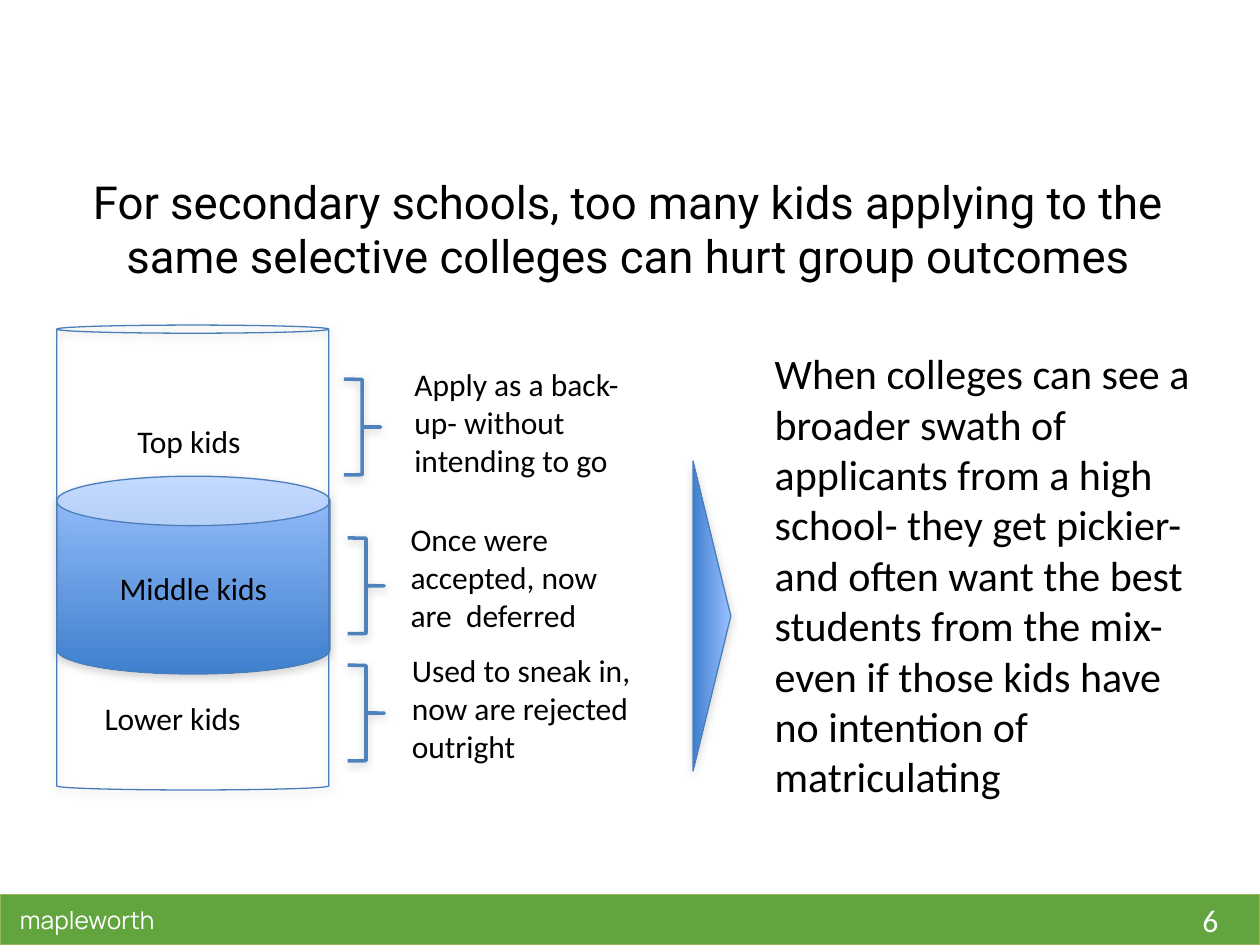
"""Build a slide on how crowded college applications hurt group outcomes."""
from lxml.etree import SubElement
from pptx import Presentation
from pptx.dml.color import RGBColor
from pptx.enum.shapes import MSO_SHAPE
from pptx.enum.text import MSO_ANCHOR, PP_ALIGN
from pptx.oxml.ns import qn
from pptx.util import Inches, Pt

BLACK = RGBColor(0x00, 0x00, 0x00)
WHITE = RGBColor(0xFF, 0xFF, 0xFF)
GREEN = RGBColor(0x62, 0xA4, 0x3E)
LIME = RGBColor(0x98, 0xB9, 0x54)
LIGHT = RGBColor(0x9B, 0xC1, 0xFF)
DEEP = RGBColor(0x3F, 0x80, 0xCD)
EDGE = RGBColor(0x4A, 0x7E, 0xBB)
BRACE = RGBColor(0x4F, 0x81, 0xBD)


def write(shape, text, size=18, font="Calibri", color=BLACK,
          align=PP_ALIGN.LEFT, anchor=MSO_ANCHOR.TOP):
    frame = shape.text_frame
    frame.word_wrap = True
    frame.vertical_anchor = anchor
    para = frame.paragraphs[0]
    para.alignment = align
    run = para.add_run()
    run.text = text
    run.font.size = Pt(size)
    run.font.name = font
    run.font.color.rgb = color


def draw(kind, box, line, width=0.75, fill=None, shade=35, adjust=()):
    shape = slide.shapes.add_shape(kind, *map(Inches, box))
    if fill == "blend":
        shape.fill.gradient()
        shape.fill.gradient_angle = 270
        for stop, color in zip(shape.fill.gradient_stops, (LIGHT, DEEP)):
            stop.color.rgb = color
    elif fill:
        shape.fill.solid()
        shape.fill.fore_color.rgb = fill
    else:
        shape.fill.background()
    shape.line.color.rgb = line
    shape.line.width = Pt(width)
    for i, value in enumerate(adjust):
        shape.adjustments[i] = value
    shape.shadow.inherit = False
    if shade:
        effects = shape._element.spPr.find(qn("a:effectLst"))
        outer = SubElement(effects, qn("a:outerShdw"), blurRad=str(Pt(5)),
                           dist=str(Pt(1.8)), dir="5400000", rotWithShape="0")
        tint = SubElement(outer, qn("a:srgbClr"), val="808080")
        SubElement(tint, qn("a:alpha"), val=str(shade * 1000))
    return shape


deck = Presentation()
deck.slide_width = Inches(10)
deck.slide_height = Inches(7.5)
slide = deck.slides.add_slide(deck.slide_layouts[6])

draw(MSO_SHAPE.RECTANGLE, (0, 7.1, 10, 0.4), LIME, fill=GREEN, shade=0)
middle = draw(MSO_SHAPE.CAN, (0.45, 3.78, 2.17, 1.57), EDGE, fill="blend",
              adjust=[0.25])
write(middle, "Middle kids", align=PP_ALIGN.CENTER, anchor=MSO_ANCHOR.MIDDLE)
draw(MSO_SHAPE.CAN, (0.45, 2.58, 2.16, 3.69), EDGE, adjust=[0.03])
arrow = draw(MSO_SHAPE.ISOSCELES_TRIANGLE, (4.42, 4.74, 2.46, 0.3), EDGE,
             fill="blend")
arrow.rotation = 90

for left, top in ((2.73, 3.01), (2.76, 4.27), (2.76, 5.28)):
    draw(MSO_SHAPE.RIGHT_BRACE, (left, top, 0.29, 0.76), BRACE, width=2,
         shade=38, adjust=[0.01, 0.5])

center = {"align": PP_ALIGN.CENTER}
footer = {"color": WHITE, "anchor": MSO_ANCHOR.MIDDLE}
labels = [
    ((0.49, 1.33, 9, 1.25),
     "For secondary schools, too many kids applying to the same selective "
     "colleges can hurt group outcomes",
     {"size": 26, "font": "Roboto", **center}),
    ((0.97, 3.3, 1.06, 0.4), "Top kids", center),
    ((0.72, 5.5, 1.3, 0.4), "Lower kids", center),
    ((3.19, 2.85, 1.86, 1.01),
     "Apply as a back-up- without intending to go", {}),
    ((3.16, 4.08, 1.89, 1.01), "Once were accepted, now are  deferred", {}),
    ((3.17, 5.12, 2.32, 1.01),
     "Used to sneak in, now are rejected outright", {}),
    ((6.05, 2.71, 3.58, 3.74),
     "When colleges can see a broader swath of applicants from a high "
     "school- they get pickier- and often want the best students from the "
     "mix- even if those kids have no intention of matriculating",
     {"size": 24}),
    ((0.06, 7.1, 1.4, 0.4), "mapleworth",
     {"size": 14, "font": "Manrope", **footer}),
    ((9.21, 7.1, 0.79, 0.4), "6", {**center, **footer}),
]
for box, text, style in labels:
    write(slide.shapes.add_textbox(*map(Inches, box)), text, **style)

deck.save("out.pptx")
